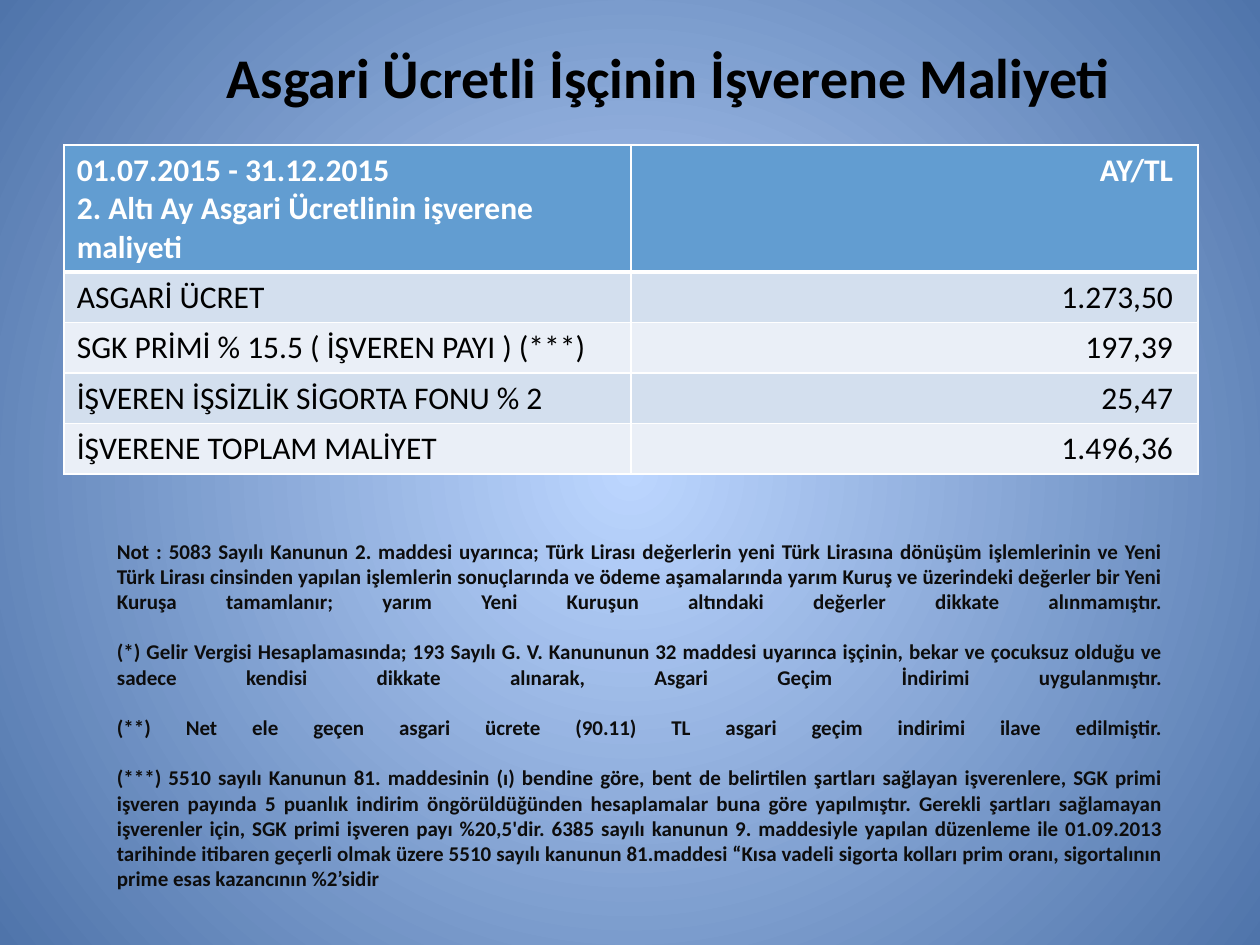
from lxml import etree
from pptx import Presentation
from pptx import util as u
from pptx.dml.color import RGBColor
from pptx.enum import text
from pptx.oxml import ns

Inches, Pt = u.Inches, u.Pt
HUES = {
    "glow": "BCD6FF", "edge": "4F74AA", "head": "629DD1", "odd": "D3DFEE",
    "even": "EAEFF7", "white": "FFFFFF", "black": "000000", "note": "0D0D0D",
}


def style(para, size, hue, bold, align):
    para.alignment = align
    para.font.name = "Calibri"
    para.font.size = Pt(size)
    para.font.bold = bold
    para.font.color.rgb = RGBColor.from_string(HUES[hue])


def edge(cell, side, width):
    line = etree.SubElement(cell._tc.get_or_add_tcPr(), ns.qn("a:" + side), w=str(Pt(width)))
    fill = etree.SubElement(line, ns.qn("a:solidFill"))
    etree.SubElement(fill, ns.qn("a:srgbClr"), val=HUES["white"])


deck = Presentation()
deck.slide_width, deck.slide_height = Inches(10), Inches(7.5)
slide = deck.slides.add_slide(deck.slide_layouts[6])

back = slide.background.fill
back.gradient()
for stop, hue in zip(back.gradient_stops, ("glow", "edge")):
    stop.color.rgb = RGBColor.from_string(HUES[hue])
grad = slide._element.find(".//" + ns.qn("a:gradFill"))
grad.remove(grad.find(ns.qn("a:lin")))
ring = etree.SubElement(grad, ns.qn("a:path"), path="circle")
etree.SubElement(ring, ns.qn("a:fillToRect"), l="50000", t="50000", r="50000", b="50000")

notes = [
    "Not : 5083 Sayılı Kanunun 2. maddesi uyarınca; Türk Lirası değerlerin yeni Türk Lirasına dönüşüm "
    "işlemlerinin ve Yeni Türk Lirası cinsinden yapılan işlemlerin sonuçlarında ve ödeme aşamalarında yarım "
    "Kuruş ve üzerindeki değerler bir Yeni Kuruşa tamamlanır; yarım Yeni Kuruşun altındaki değerler dikkate "
    "alınmamıştır.",
    "(*) Gelir Vergisi Hesaplamasında; 193 Sayılı G. V. Kanununun 32 maddesi uyarınca işçinin, bekar ve "
    "çocuksuz olduğu ve sadece kendisi dikkate alınarak, Asgari Geçim İndirimi uygulanmıştır.",
    "(**) Net ele geçen asgari ücrete (90.11) TL asgari geçim indirimi ilave edilmiştir.",
    "(***) 5510 sayılı Kanunun 81. maddesinin (ı) bendine göre, bent de belirtilen şartları sağlayan "
    "işverenlere, SGK primi işveren payında 5 puanlık indirim öngörüldüğünden hesaplamalar buna göre "
    "yapılmıştır. Gerekli şartları sağlamayan işverenler için, SGK primi işveren payı %20,5'dir. 6385 sayılı "
    "kanunun 9. maddesiyle yapılan düzenleme ile 01.09.2013 tarihinde itibaren geçerli olmak üzere 5510 "
    "sayılı kanunun 81.maddesi “Kısa vadeli sigorta kolları prim oranı, sigortalının prime esas kazancının "
    "%2’sidir",
]
title = "Asgari Ücretli İşçinin İşverene Maliyeti"
top, low = text.MSO_ANCHOR.TOP, text.MSO_ANCHOR.BOTTOM
mid, just = text.PP_ALIGN.CENTER, text.PP_ALIGN.JUSTIFY
for words, x, y, tall, anchor, size, hue, align in [
    (title, 1.06, 0.29, 1.49, top, 32, "black", mid),
    ("\v\v".join(notes), 0.83, 5.48, 1.64, low, 12, "note", just),
]:
    frame = slide.shapes.add_textbox(Inches(x), Inches(y), Inches(8.5), Inches(tall)).text_frame
    frame.word_wrap = True
    frame.vertical_anchor = anchor
    frame.paragraphs[0].text = words
    style(frame.paragraphs[0], size, hue, True, align)

rows = [
    ("01.07.2015 - 31.12.2015\v2. Altı Ay Asgari Ücretlinin işverene maliyeti", "AY/TL"),
    ("ASGARİ ÜCRET", "1.273,50"),
    ("SGK PRİMİ % 15.5 ( İŞVEREN PAYI ) (***)", "197,39"),
    ("İŞVEREN İŞSİZLİK SİGORTA FONU % 2", "25,47"),
    ("İŞVERENE TOPLAM MALİYET", "1.496,36"),
]
grid = slide.shapes.add_table(
    len(rows), 2, Inches(0.51), Inches(1.15), Inches(9), Inches(2.62)).table
for r, row in enumerate(rows):
    head = r == 0
    grid.rows[r].height = Inches(1.01 if head else 0.4)
    for c, words in enumerate(row):
        cell = grid.cell(r, c)
        para = cell.text_frame.paragraphs[0]
        para.text = words
        align = text.PP_ALIGN.RIGHT if c else text.PP_ALIGN.LEFT
        style(para, 18, "white" if head else "black", head, align)
        if c:
            cell.margin_right = Inches(0.2)
        for side in ("lnL", "lnR", "lnT", "lnB"):
            thick = (head and side == "lnB") or (r == 1 and side == "lnT")
            edge(cell, side, 3 if thick else 1)
        cell.fill.solid()
        hue = "head" if head else "odd" if r % 2 else "even"
        cell.fill.fore_color.rgb = RGBColor.from_string(HUES[hue])

deck.save("out.pptx")
